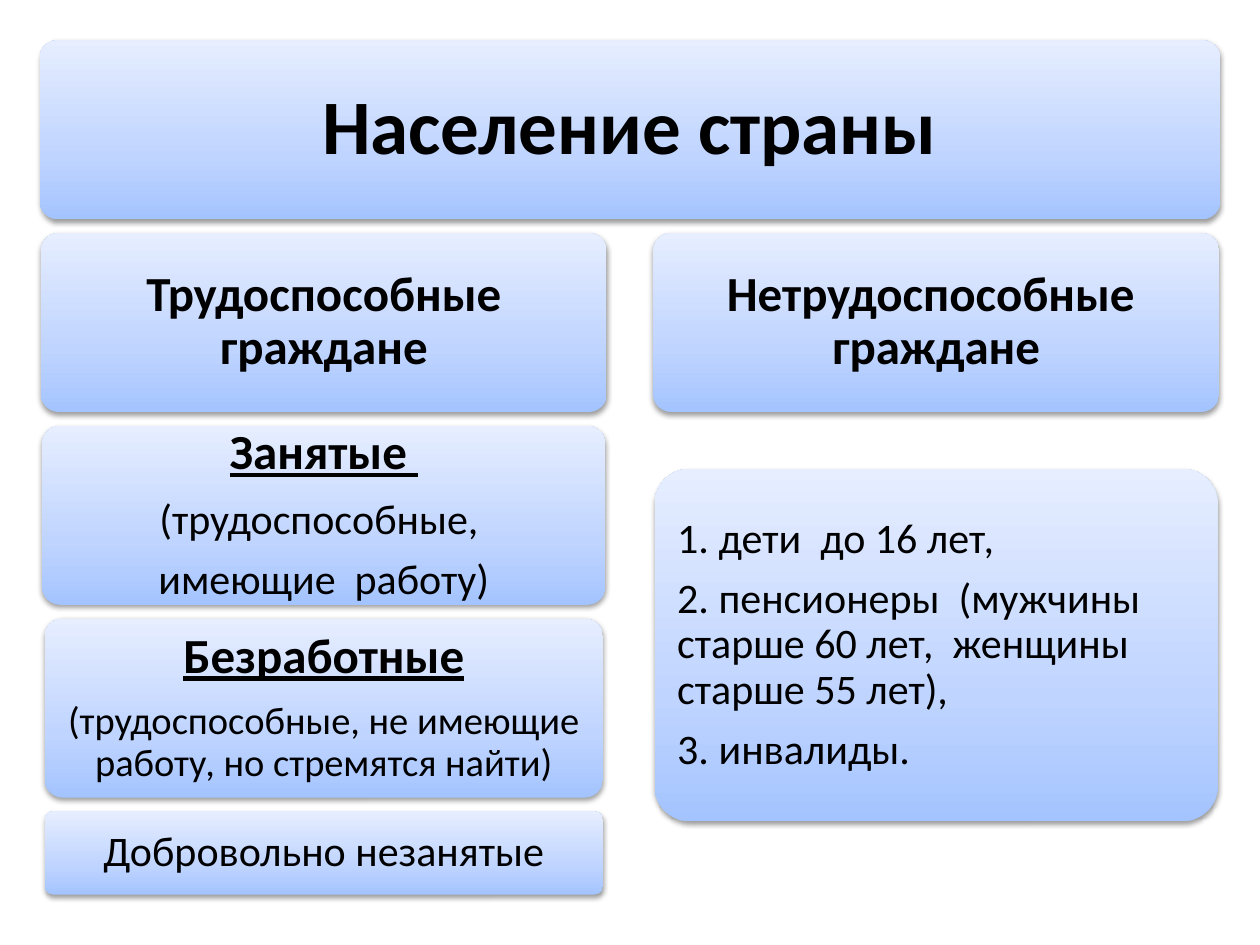
"""Build a slide that divides a country's population into groups."""
import pptx
import pptx.dml.color
import pptx.enum.shapes
import pptx.enum.text
import pptx.oxml.ns
import pptx.util
from lxml import etree
from pptx.util import Inches

BLACK = "000000"
GRADIENT_STOPS = ((0, "A4C4FF"), (35, "BFD4FF"), (100, "E6EEFF"))
LEFT_CENTRE, RIGHT_CENTRE = 2.57, 7.43
TOP, ROW_HEIGHT, ROW_STEP = 0.32, 1.42, 1.53


def set_color(color_format, color):
    color_format.rgb = pptx.dml.color.RGBColor.from_string(color)


def add_element(parent, tag, **attributes):
    element = etree.SubElement(parent, pptx.oxml.ns.qn(tag))
    for name, value in attributes.items():
        element.set(name, str(value))
    return element


def set_gradient(shape):
    shape.fill.gradient()
    shape.fill.gradient_angle = 90
    stop_list = shape.element.xpath(".//a:gsLst")[0]
    for stop in list(stop_list):
        stop_list.remove(stop)
    for position, color in GRADIENT_STOPS:
        stop = add_element(stop_list, "a:gs", pos=position * 1000)
        add_element(stop, "a:srgbClr", val=color)


def set_shadow(shape):
    shape.shadow.inherit = False
    effects = shape.element.xpath(".//a:effectLst")[0]
    shadow = add_element(effects, "a:outerShdw", blurRad=pptx.util.Pt(3.1),
                         dist=pptx.util.Pt(1.6), dir=90 * 60000, rotWithShape=0)
    color = add_element(shadow, "a:srgbClr", val=BLACK)
    add_element(color, "a:alpha", val=38000)


def add_card(slide, centre, top, width, height, inset=0.12):
    shape = slide.shapes.add_shape(
        pptx.enum.shapes.MSO_SHAPE.ROUNDED_RECTANGLE,
        Inches(centre - width / 2), Inches(top), Inches(width), Inches(height))
    shape.adjustments[0] = 0.1
    set_gradient(shape)
    shape.line.fill.background()
    set_shadow(shape)
    frame = shape.text_frame
    frame.word_wrap = True
    frame.vertical_anchor = pptx.enum.text.MSO_ANCHOR.MIDDLE
    frame.margin_left = frame.margin_right = Inches(inset)
    frame.margin_top = frame.margin_bottom = Inches(inset)
    return frame


def add_text(frame, text, size=24, bold=False, underline=False, align="CENTER"):
    paragraph = frame.paragraphs[0]
    if paragraph.runs:
        paragraph = frame.add_paragraph()
    paragraph.alignment = pptx.enum.text.PP_ALIGN[align]
    paragraph.line_spacing = 0.9
    paragraph.space_after = pptx.util.Pt(round(0.35 * size, 1))
    run = paragraph.add_run()
    run.text = text
    run.font.name = "Calibri"
    run.font.size = pptx.util.Pt(size)
    run.font.bold = bold
    run.font.underline = underline
    set_color(run.font.color, BLACK)


def main():
    presentation = pptx.Presentation()
    presentation.slide_width, presentation.slide_height = Inches(10), Inches(7.5)
    slide = presentation.slides.add_slide(presentation.slide_layouts[6])
    row_tops = [TOP + ROW_STEP * row for row in range(5)]

    population = add_card(slide, 5, row_tops[0], 9.37, ROW_HEIGHT, inset=0.18)
    add_text(population, "Население страны", size=44, bold=True)

    for centre, title in ((LEFT_CENTRE, "Трудоспособные граждане"),
                          (RIGHT_CENTRE, "Нетрудоспособные  граждане")):
        citizens = add_card(slide, centre, row_tops[1], 4.49, ROW_HEIGHT)
        add_text(citizens, title, size=28, bold=True)

    employed = add_card(slide, LEFT_CENTRE, row_tops[2], 4.47, ROW_HEIGHT)
    add_text(employed, "Занятые ", size=28, bold=True, underline=True)
    add_text(employed, "(трудоспособные, ")
    add_text(employed, "имеющие  работу)")

    unemployed = add_card(slide, LEFT_CENTRE, row_tops[3], 4.43, ROW_HEIGHT)
    add_text(unemployed, "Безработные", size=28, bold=True, underline=True)
    add_text(unemployed, "(трудоспособные, не имеющие работу, но стремятся найти)",
             size=22)

    voluntary = add_card(slide, LEFT_CENTRE, row_tops[4], 4.43, 0.66, inset=0.1)
    add_text(voluntary, "Добровольно незанятые")

    dependants = add_card(slide, RIGHT_CENTRE, 3.72, 4.47, 2.8, inset=0.1)
    for text in ("1. дети  до 16 лет,",
                 "2. пенсионеры  (мужчины старше 60 лет,  женщины  старше 55 лет),",
                 "3. инвалиды."):
        add_text(dependants, text, align="LEFT")

    presentation.save("out.pptx")


if __name__ == "__main__":
    main()
